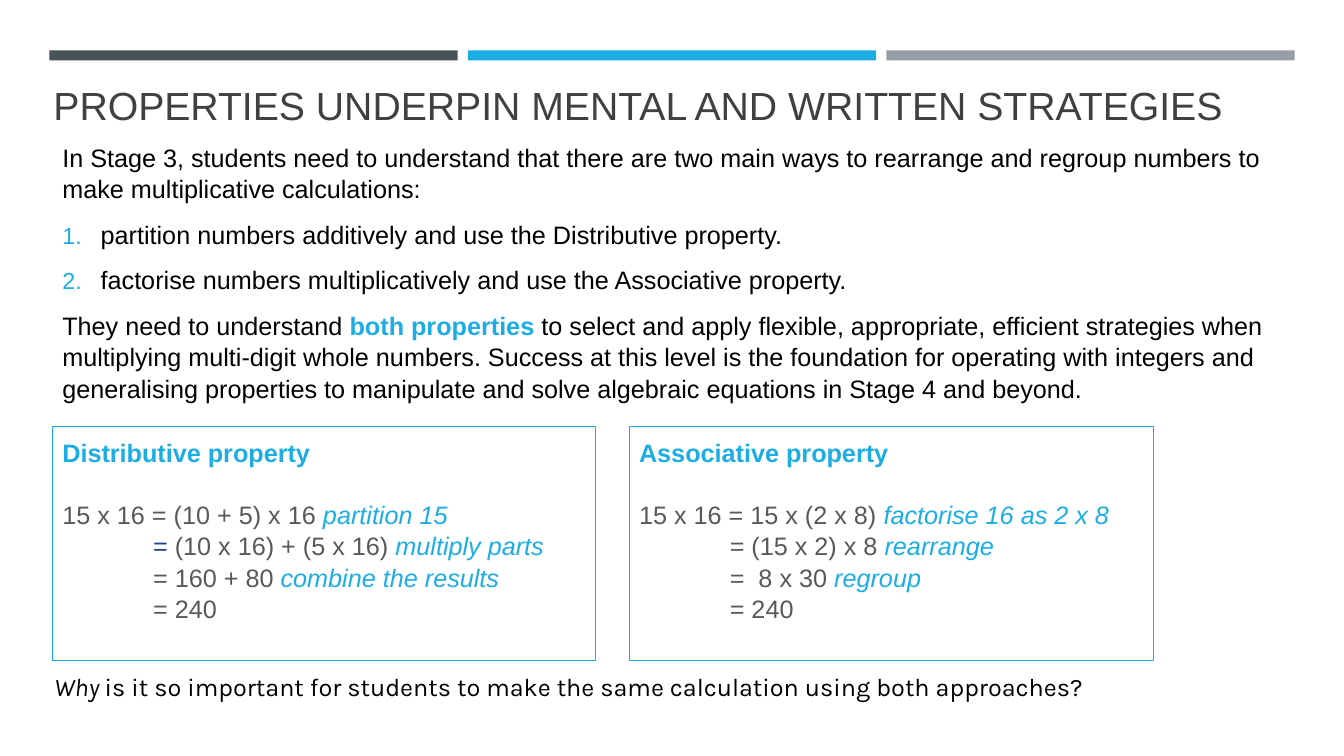
from lxml import etree
from pptx import Presentation
from pptx import util as u
from pptx.dml.color import RGBColor
from pptx.enum import shapes, text
from pptx.oxml.ns import qn

BLUE, GREY, BLACK, NAVY = "1CADE4", "595959", "000000", "1C4587"


def rgb(value):
    return RGBColor.from_string(value)


def add_run(p, content, size=18, font="Arial", color=BLACK, bold=False, italic=False):
    r = p.add_run()
    r.text = content
    f = r.font
    f.size, f.name, f.bold, f.italic = u.Pt(size), font, bold, italic
    f.color.rgb = rgb(color)


class SlideBuilder:
    """Holds the current slide and the shared text style."""

    line_spacing = 1.04

    def __init__(self, prs):
        self.s = prs.slides.add_slide(prs.slide_layouts[5])

    def frame(self, sp, inset_y=0.05, anchor=text.MSO_ANCHOR.TOP):
        tf = sp.text_frame
        tf.word_wrap = True
        tf.auto_size = text.MSO_AUTO_SIZE.NONE
        tf.vertical_anchor = anchor
        tf.margin_left = tf.margin_right = u.Inches(0.1)
        tf.margin_top = tf.margin_bottom = u.Inches(inset_y)
        return tf

    def paragraph(self, tf, runs, before=0, indent=0, hanging=0):
        """Add a paragraph of (text, format) runs; the empty first one is reused."""
        first = tf.paragraphs[0]
        p = tf.add_paragraph() if first.runs else first
        p.alignment = text.PP_ALIGN.LEFT
        p.line_spacing = self.line_spacing
        p.space_before = u.Pt(before)
        pPr = p._p.get_or_add_pPr()
        pPr.set("marL", str(u.Inches(indent)))
        pPr.set("indent", str(-u.Inches(hanging)))
        for content, style in runs:
            add_run(p, content, **style)
        return p

    def number(self, p):
        pPr = p._p.get_or_add_pPr()
        color = etree.SubElement(pPr, qn("a:buClr"))
        etree.SubElement(color, qn("a:srgbClr"), val=BLUE)
        etree.SubElement(pPr, qn("a:buSzPct"), val="92000")
        etree.SubElement(pPr, qn("a:buFont"), typeface="+mj-lt")
        etree.SubElement(pPr, qn("a:buAutoNum"), type="arabicPeriod")

    def title(self, content, box):
        sp = self.s.shapes.title
        sp.left, sp.top, sp.width, sp.height = map(u.Inches, box)
        tf = self.frame(sp, anchor=text.MSO_ANCHOR.MIDDLE)
        p = tf.paragraphs[0]
        p.alignment = text.PP_ALIGN.LEFT
        add_run(p, content, size=28, color="404040")

    def textbox(self, box, inset_y=0.05):
        return self.frame(self.s.shapes.add_textbox(*map(u.Inches, box)), inset_y)

    def rectangle(self, box, fill=None, line=None):
        sp = self.s.shapes.add_shape(shapes.MSO_SHAPE.RECTANGLE, *map(u.Inches, box))
        sp.shadow.inherit = False
        if fill:
            sp.fill.solid()
            sp.fill.fore_color.rgb = rgb(fill)
        else:
            sp.fill.background()
        if line:
            sp.line.color.rgb = rgb(line)
            sp.line.width = u.Pt(0.75)
        else:
            sp.line.fill.background()
        return sp

    def worked_example(self, box, heading, steps):
        """Add an outlined box with a heading and (equals, working, comment) steps."""
        tf = self.frame(self.rectangle(box, line=BLUE), inset_y=0.1)
        self.paragraph(tf, [(heading, dict(color=BLUE, bold=True))])
        for i, (equals, working, comment) in enumerate(steps):
            runs = [equals, (working, dict(color=GREY)),
                    (comment, dict(color=BLUE, italic=True))]
            self.paragraph(tf, [r for r in runs if r and r[0]],
                           before=0 if i else 21.6, indent=0.9 if i else 0)


def main():
    prs = Presentation()
    prs.slide_width, prs.slide_height = u.Inches(13.33), u.Inches(7.5)
    slide = SlideBuilder(prs)

    for i, color in enumerate(("465359", BLUE, "969FA7")):
        slide.rectangle((0.49 + 4.15 * i, 0.5, 4.05, 0.1), fill=color)
    slide.title("PROPERTIES UNDERPIN MENTAL AND WRITTEN STRATEGIES",
                (0.43, 0.51, 12.28, 1.06))

    body = slide.textbox((0.52, 1.35, 12.28, 2.71))
    slide.paragraph(body, [(
        "In Stage 3, students need to understand that there are two main ways to "
        "rearrange and regroup numbers to make multiplicative calculations:", {})])
    for way in ("partition numbers additively and use the Distributive property.",
                "factorise numbers multiplicatively and use the Associative property."):
        slide.number(slide.paragraph(body, [(way, {})], before=10,
                                     indent=0.38, hanging=0.38))
    slide.paragraph(body, [
        ("They need to understand ", {}),
        ("both properties ", dict(color=BLUE, bold=True)),
        ("to select and apply flexible, appropriate, efficient strategies when "
         "multiplying multi-digit whole numbers. Success at this level is the "
         "foundation for operating with integers and generalising properties to "
         "manipulate and solve algebraic equations in Stage 4 and beyond.", {}),
    ], before=10)

    slide.worked_example((0.52, 4.23, 5.39, 2.32), "Distributive property", [
        (None, "15 x 16 = (10 + 5) x 16 ", "partition 15"),
        (("= ", dict(color=NAVY)), "(10 x 16) + (5 x 16) ", "multiply parts"),
        (None, "= 160 + 80 ", "combine the results"),
        (None, "= 240", ""),
    ])
    slide.worked_example((6.24, 4.23, 5.2, 2.32), "Associative property", [
        (None, "15 x 16 = 15 x (2 x 8) ", "factorise 16 as 2 x 8"),
        (None, "= (15 x 2) x 8 ", "rearrange"),
        (None, "=  8 x 30 ", "regroup"),
        (None, "= 240", ""),
    ])

    question = slide.textbox((0.44, 6.55, 12.45, 0.5), inset_y=0.1)
    slide.paragraph(question, [
        ("Why ", dict(font="Karla", italic=True)),
        ("is it so important for students to make the same calculation using "
         "both approaches?", dict(font="Karla")),
    ])
    prs.save("out.pptx")


if __name__ == "__main__":
    main()
